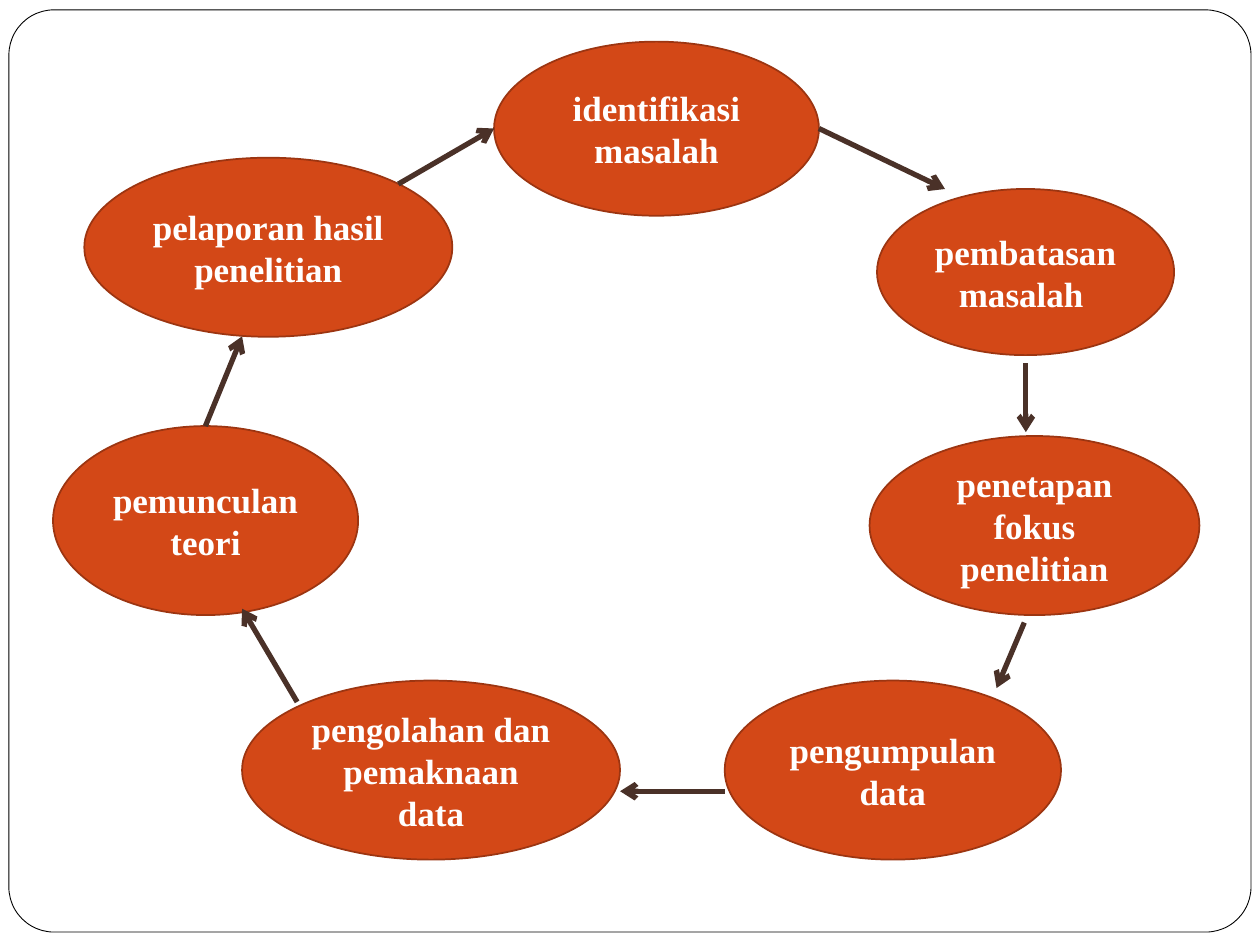
import pptx
import pptx.util
import pptx.dml.color
import pptx.enum.shapes
import pptx.enum.text
import pptx.oxml
import pptx.oxml.ns
from pptx.util import Cm, Pt

COLORS = {
    "page": "FFFFFF",
    "frame": "000000",
    "oval": "D34817",
    "edge": "9C3511",
    "text": "FFFFFF",
    "arrow": "4A3128",
}
FONT = "Times New Roman"

# Steps in cycle order: text, left, top, width, height in cm
STEPS = [
    ("identifikasi masalah", 8.89, 0, 6.55, 3.51),
    ("pembatasan masalah ", 16.61, 2.97, 5.99, 3.35),
    ("penetapan fokus penelitian", 16.46, 7.95, 6.65, 3.61),
    ("pengumpulan data", 13.54, 12.88, 6.78, 3.61),
    ("pengolahan dan pemaknaan data", 3.81, 12.88, 7.62, 3.61),
    ("pemunculan teori", 0, 7.75, 6.15, 3.81),
    ("pelaporan hasil penelitian", 0.63, 2.34, 7.42, 3.61),
]

# Arrows in cycle order: start x, y and end x, y in cm
ARROWS = [
    (15.44, 1.75, 17.98, 2.97),
    (19.61, 6.48, 19.61, 7.87),
    (19.58, 11.71, 19.02, 13.03),
    (13.54, 15.11, 11.43, 15.11),
    (4.92, 13.31, 3.81, 11.43),
    (3.07, 7.75, 3.81, 5.94),
    (6.96, 2.87, 8.89, 1.75),
]


def color(name):
    return pptx.dml.color.RGBColor.from_string(COLORS[name])


def add_form(slide, kind, box, fill, line, width):
    """Add a filled, outlined shape without shadow; box is in cm."""
    form = slide.shapes.add_shape(kind, *map(Cm, box))
    form.shadow.inherit = False
    form.fill.solid()
    form.fill.fore_color.rgb = color(fill)
    form.line.color.rgb = color(line)
    form.line.width = Pt(width)
    return form


def add_frame(slide, box):
    kind = pptx.enum.shapes.MSO_SHAPE.ROUNDED_RECTANGLE
    frame = add_form(slide, kind, box, "page", "frame", 0.5)
    frame.adjustments[0] = 0.049


def add_step(slide, text, box):
    kind = pptx.enum.shapes.MSO_SHAPE.OVAL
    oval = add_form(slide, kind, box, "oval", "edge", 1)
    body = oval.text_frame
    body.word_wrap = True
    body.vertical_anchor = pptx.enum.text.MSO_ANCHOR.MIDDLE
    body.text = text
    para = body.paragraphs[0]
    para.alignment = pptx.enum.text.PP_ALIGN.CENTER
    font = para.runs[0].font
    font.name = FONT
    font.size = Pt(20)
    font.bold = True
    font.color.rgb = color("text")


def add_arrow(slide, ends):
    kind = pptx.enum.shapes.MSO_CONNECTOR.STRAIGHT
    arrow = slide.shapes.add_connector(kind, *map(Cm, ends))
    arrow.line.color.rgb = color("arrow")
    arrow.line.width = Pt(3)
    space = pptx.oxml.ns.nsdecls("a")
    line = arrow.line._get_or_add_ln()
    line.append(pptx.oxml.parse_xml(f'<a:tailEnd {space} type="arrow"/>'))
    props = arrow._element.spPr
    props.append(pptx.oxml.parse_xml(f"<a:effectLst {space}/>"))


def add_cycle(slide, left, top):
    """Draw the research cycle with its corner at left, top in cm."""
    for text, x, y, width, height in STEPS:
        add_step(slide, text, (left + x, top + y, width, height))
    for x1, y1, x2, y2 in ARROWS:
        add_arrow(slide, (left + x1, top + y1, left + x2, top + y2))


def main():
    deck = pptx.Presentation()
    deck.slide_width = Cm(25.4)
    deck.slide_height = Cm(19.05)
    slide = deck.slides.add_slide(deck.slide_layouts[6])
    slide.background.fill.solid()
    slide.background.fill.fore_color.rgb = color("page")
    add_frame(slide, (0.18, 0.2, 25.04, 18.59))
    add_cycle(slide, 1.07, 0.84)
    deck.save("out.pptx")


if __name__ == "__main__":
    main()
